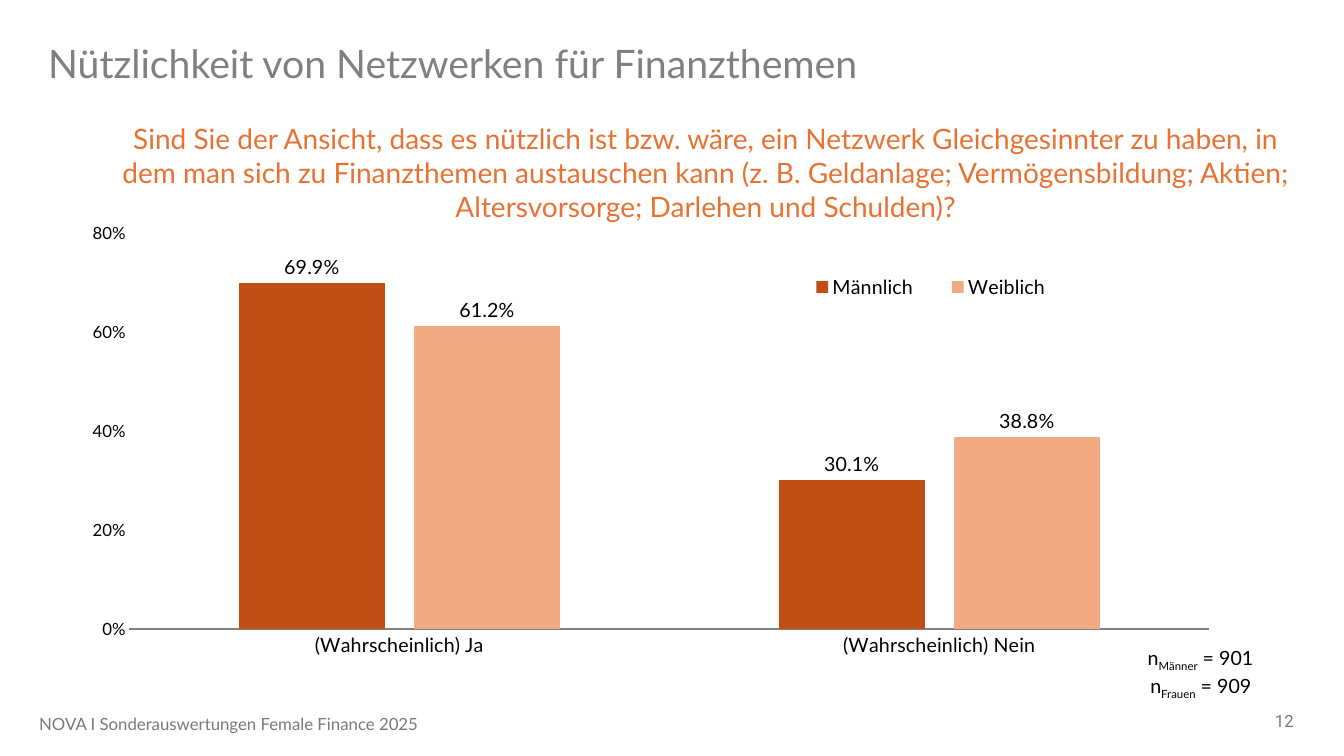
from dataclasses import dataclass

from lxml import etree
from pptx import Presentation
from pptx.chart.data import CategoryChartData
from pptx.dml.color import RGBColor
from pptx.enum.chart import (XL_CHART_TYPE, XL_LABEL_POSITION,
                             XL_LEGEND_POSITION, XL_TICK_MARK)
from pptx.enum.text import MSO_ANCHOR, PP_ALIGN
from pptx.oxml.ns import qn
from pptx.util import Inches, Pt

COLUMNS = XL_CHART_TYPE.COLUMN_CLUSTERED
OUTSIDE_END = XL_LABEL_POSITION.OUTSIDE_END
LEGEND_RIGHT = XL_LEGEND_POSITION.RIGHT
NO_TICK = XL_TICK_MARK.NONE
LEFT, CENTER, RIGHT = PP_ALIGN.LEFT, PP_ALIGN.CENTER, PP_ALIGN.RIGHT
TOP, MIDDLE = MSO_ANCHOR.TOP, MSO_ANCHOR.MIDDLE


@dataclass(frozen=True)
class Theme:
    font: str = "Lato"
    number_font: str = "Roboto"
    title: RGBColor = RGBColor(0x80, 0x80, 0x80)
    question: RGBColor = RGBColor(0xE9, 0x71, 0x32)
    footer: RGBColor = RGBColor(0x79, 0x79, 0x79)
    ink: RGBColor = RGBColor(0, 0, 0)
    men: RGBColor = RGBColor(0xC0, 0x4F, 0x15)
    women: RGBColor = RGBColor(0xF2, 0xAA, 0x84)
    title_size: int = 28
    question_size: int = 20
    body_size: int = 14
    small_size: int = 12


THEME = Theme()


def style_font(font, size, color, name=THEME.font):
    font.size = Pt(size)
    font.name = name
    font.color.rgb = color


def add_text(slide, box, text, size, color, align=LEFT, anchor=TOP,
             font_name=THEME.font):
    """Add a wrapped one-paragraph text box and return the paragraph."""
    frame = slide.shapes.add_textbox(*map(Inches, box)).text_frame
    frame.word_wrap = True
    frame.vertical_anchor = anchor
    frame.text = text
    paragraph = frame.paragraphs[0]
    paragraph.alignment = align
    for run in paragraph.runs:
        style_font(run.font, size, color, font_name)
    return paragraph


def add_sample_size(slide, box, group, count):
    """Add a line such as n = 901 with the group as subscript."""
    line = add_text(slide, box, "n", THEME.body_size, THEME.ink, RIGHT)
    for text in (group, f" = {count}"):
        run = line.add_run()
        run.text = text
        style_font(run.font, THEME.body_size, THEME.ink)
    line.runs[1]._r.get_or_add_rPr().set("baseline", "-25000")


def set_layout(parent, before, x, y, width, height, inner=False):
    """Place a chart part by fractions of the chart area."""
    for old in parent.findall(qn("c:layout")):
        parent.remove(old)
    layout = etree.Element(qn("c:layout"))
    manual = etree.SubElement(layout, qn("c:manualLayout"))
    settings = [("layoutTarget", "inner")] if inner else []
    settings += [("xMode", "edge"), ("yMode", "edge"),
                 ("x", x), ("y", y), ("w", width), ("h", height)]
    for tag, value in settings:
        etree.SubElement(manual, qn(f"c:{tag}")).set("val", str(value))
    parent.find(qn(before)).addprevious(layout)


def add_answer_chart(slide, box, categories, series):
    data = CategoryChartData(number_format="0.0%")
    data.categories = categories
    for name, values, _ in series:
        data.add_series(name, values)
    chart = slide.shapes.add_chart(COLUMNS, *map(Inches, box), data).chart
    style_font(chart.font, THEME.body_size, THEME.ink)
    chart.has_title = False

    # Columns and their labels
    plot = chart.plots[0]
    plot.vary_by_categories = False
    plot.gap_width = 150
    plot.overlap = -20
    for columns, (_, _, color) in zip(plot.series, series):
        columns.format.fill.solid()
        columns.format.fill.fore_color.rgb = color
        labels = columns.data_labels
        labels.show_value = True
        labels.position = OUTSIDE_END
        labels.number_format = "0.0%"
        labels.number_format_is_linked = False
        style_font(labels.font, THEME.body_size, THEME.ink)

    # Axes
    answers, shares = chart.category_axis, chart.value_axis
    for axis, size in ((answers, THEME.body_size), (shares, THEME.small_size)):
        axis.major_tick_mark = axis.minor_tick_mark = NO_TICK
        axis.has_major_gridlines = False
        style_font(axis.tick_labels.font, size, THEME.ink)
    answers.format.line.color.rgb = THEME.title
    answers.format.line.width = Pt(0.75)
    shares.format.line.fill.background()
    shares.minimum_scale, shares.maximum_scale = 0, 0.8
    shares.major_unit = 0.2
    shares.tick_labels.number_format = "0%"
    shares.tick_labels.number_format_is_linked = False

    # Legend and plot area
    chart.has_legend = True
    chart.legend.position = LEGEND_RIGHT
    chart.legend.include_in_layout = False
    style_font(chart.legend.font, THEME.body_size, THEME.ink)
    set_layout(chart.legend._element, "c:overlay", 0.61, 0.13, 0.24, 0.06)
    plot_area = chart._chartSpace.chart.plotArea
    set_layout(plot_area, "c:barChart", 0.06, 0.05, 0.9, 0.81, inner=True)


def main():
    presentation = Presentation()
    presentation.slide_width = Inches(13.33)
    presentation.slide_height = Inches(7.5)
    slide = presentation.slides.add_slide(presentation.slide_layouts[6])

    # Title
    title = add_text(slide, (0.38, 0.3, 12.63, 0.59),
                     "Nützlichkeit von Netzwerken für Finanzthemen",
                     THEME.title_size, THEME.title, anchor=MIDDLE)
    title.line_spacing = 1.14

    # Answers by gender
    add_answer_chart(
        slide, (0.57, 2.07, 11.9, 4.85),
        ["(Wahrscheinlich) Ja", "(Wahrscheinlich) Nein"],
        [("Männlich ", (0.699, 0.301), THEME.men),
         ("Weiblich ", (0.612, 0.388), THEME.women)])

    # Survey question
    add_text(slide, (1.05, 1.16, 11.9, 1.11),
             "Sind Sie der Ansicht, dass es nützlich ist bzw. wäre, ein "
             "Netzwerk Gleichgesinnter zu haben, in dem man sich zu "
             "Finanzthemen austauschen kann (z. B. Geldanlage; "
             "Vermögensbildung; Aktien; Altersvorsorge; Darlehen und "
             "Schulden)?",
             THEME.question_size, THEME.question, CENTER)

    # Footer
    add_text(slide, (9.93, 6.95, 3, 0.4), "12", THEME.small_size,
             THEME.footer, RIGHT, MIDDLE, THEME.number_font)
    add_text(slide, (0.29, 6.98, 6.7, 0.4),
             "NOVA I Sonderauswertungen Female Finance 2025",
             THEME.small_size, THEME.footer, anchor=MIDDLE)

    # Sample sizes
    add_sample_size(slide, (10.66, 6.36, 1.87, 0.34), "Männer", 901)
    add_sample_size(slide, (10.64, 6.64, 1.87, 0.34), "Frauen", 909)

    presentation.save("out.pptx")


if __name__ == "__main__":
    main()
